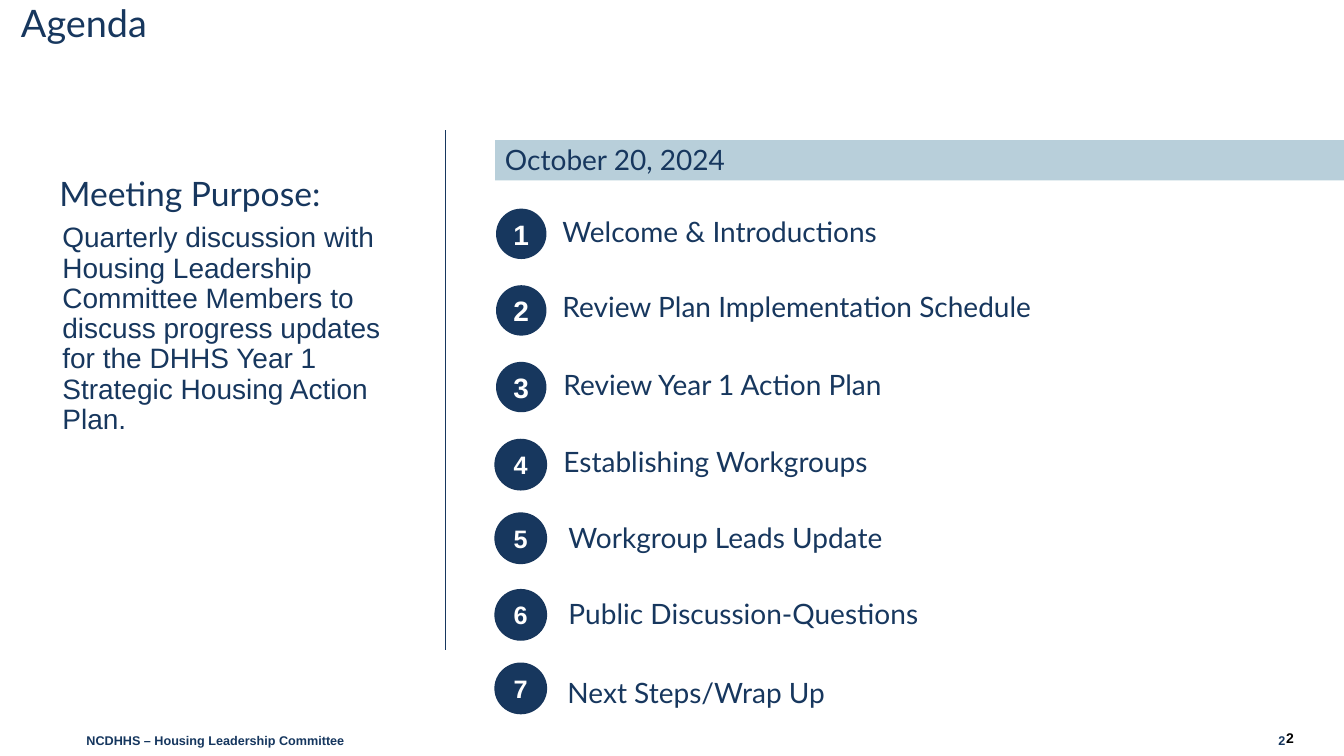
from pptx import Presentation
from pptx.dml.color import RGBColor
from pptx.enum.shapes import MSO_CONNECTOR, MSO_SHAPE
from pptx.enum.text import MSO_ANCHOR, PP_ALIGN
from pptx.oxml.ns import qn
from pptx.util import Inches, Pt
from lxml.etree import SubElement

COLORS = {
    "navy": "17375E",
    "outline": "17365C",
    "footer": "15365E",
    "band": "B8CFDA",
    "white": "FFFFFF",
    "black": "000000",
}
HEADING_FONT = "Lato"
BODY_FONT = "Arial"

AGENDA = [
    ("Welcome & Introductions", 2.07, 5.48, 2.12),
    ("Review Plan Implementation Schedule", 2.83, 5.48, 2.86),
    ("Review Year 1 Action Plan", 3.59, 5.49, 3.63),
    ("Establishing Workgroups", 4.36, 5.49, 4.4),
    ("Workgroup Leads Update", 5.09, 5.54, 5.15),
    ("Public Discussion-Questions", 5.85, 5.54, 5.91),
    ("Next Steps/Wrap Up", 6.58, 5.53, 6.69),
]


class AgendaSlide:
    def __init__(self, presentation):
        self.slide = presentation.slides.add_slide(presentation.slide_layouts[6])
        self.shapes = self.slide.shapes

    def color(self, name):
        return RGBColor.from_string(COLORS[name])

    def set_text(self, shape, text, size, font, color, bold=False,
                 align=PP_ALIGN.LEFT, spacing=None):
        shape.text_frame.text = text
        shape.text_frame.word_wrap = True
        for paragraph in shape.text_frame.paragraphs:
            paragraph.alignment = align
            paragraph.line_spacing = spacing
            for run in paragraph.runs:
                run.font.size = Pt(size)
                run.font.name = font
                run.font.bold = bold
                run.font.color.rgb = self.color(color)

    def text(self, text, left, top, width, height, size=20, font=HEADING_FONT,
             color="navy", **style):
        box = self.shapes.add_textbox(
            Inches(left), Inches(top), Inches(width), Inches(height))
        self.set_text(box, text, size, font, color, **style)

    def filled(self, kind, left, top, width, height, fill, outline=None):
        shape = self.shapes.add_shape(
            kind, Inches(left), Inches(top), Inches(width), Inches(height))
        shape.shadow.inherit = False
        shape.fill.solid()
        shape.fill.fore_color.rgb = self.color(fill)
        if outline:
            shape.line.color.rgb = self.color(outline)
            shape.line.width = Pt(1)
        else:
            shape.line.fill.background()
        return shape

    def badge(self, number, left, top, width, size, outline):
        circle = self.filled(MSO_SHAPE.OVAL, left, top, width, 0.5, "navy", outline)
        frame = circle.text_frame
        frame.vertical_anchor = MSO_ANCHOR.MIDDLE
        frame.margin_left = frame.margin_right = 0
        self.set_text(circle, str(number), size, BODY_FONT, "white", bold=True,
                      align=PP_ALIGN.CENTER)

    def divider(self, left, top, bottom):
        line = self.shapes.add_connector(
            MSO_CONNECTOR.STRAIGHT,
            Inches(left), Inches(top), Inches(left), Inches(bottom))
        line.line.color.rgb = self.color("navy")
        line.line.width = Pt(1)
        SubElement(line._element.spPr, qn("a:effectLst"))


def main():
    presentation = Presentation()
    presentation.slide_width = Inches(13.33)
    presentation.slide_height = Inches(7.5)
    agenda = AgendaSlide(presentation)

    agenda.text("Agenda", 0.11, 0, 13.01, 0.5, size=27, spacing=0.9)
    agenda.divider(4.42, 1.29, 6.45)

    agenda.text("Meeting Purpose:", 0.49, 1.67, 2.99, 0.5, size=24)
    agenda.text(
        "Quarterly discussion with Housing Leadership Committee Members to "
        "discuss progress updates for the DHHS Year 1 Strategic Housing "
        "Action Plan.",
        0.52, 2.17, 3.72, 2.69, font=BODY_FONT, spacing=0.9)

    agenda.filled(MSO_SHAPE.RECTANGLE, 4.91, 1.39, 8.42, 0.4, "band")
    agenda.text("October 20, 2024", 4.91, 1.4, 5.42, 0.39, spacing=0.9)

    for number, (topic, badge_top, left, top) in enumerate(AGENDA, start=1):
        if number <= 3:
            agenda.badge(number, 4.92, badge_top, 0.5, 20, None)
        else:
            agenda.badge(number, 4.91, badge_top, 0.51, 18, "outline")
        agenda.text(topic, left, top, 6.2, 0.5, spacing=0.9)

    footer = {"size": 9, "font": BODY_FONT, "color": "footer", "bold": True}
    agenda.text("NCDHHS – Housing Leadership Committee",
                0.76, 7.22, 11.66, 0.29, **footer)
    agenda.text("2", 12.58, 7.22, 0.59, 0.3, **footer)
    agenda.text("2", 12.11, 7.19, 0.82, 0.31, size=10, font=BODY_FONT,
                color="black", bold=True, align=PP_ALIGN.RIGHT)

    presentation.save("out.pptx")


if __name__ == "__main__":
    main()
